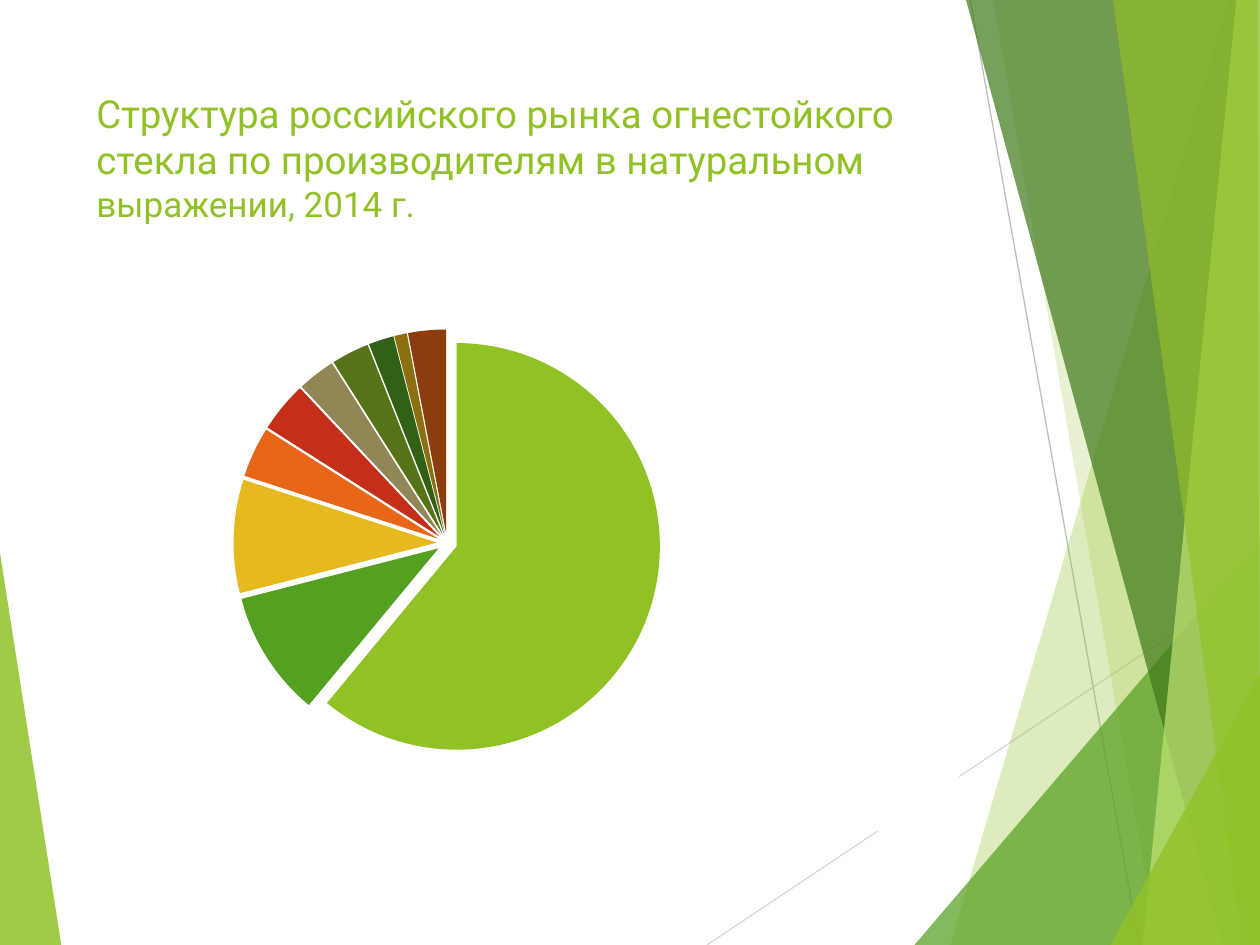
from lxml import etree
from pptx import Presentation
from pptx.chart.data import CategoryChartData
from pptx.dml.color import RGBColor
from pptx.enum import chart as ch, shapes, text
from pptx.oxml import parse_xml
from pptx.oxml.ns import nsdecls, qn
from pptx.util import Pt

W, H = 720, 540
FONT = "Roboto"
COLORS = {
    "lime": "90C226", "green": "54A021", "forest": "3F7819", "pale": "C0E474",
    "line": "D9D9D9", "dark line": "BFBFBF", "white": "FFFFFF", "black": "000000",
}

TITLE = [
    ("Структура российского рынка огнестойкого стекла по производителям в натуральном ", 22),
    ("выражении, 2014 г.", 20),
]
TITLE_BOX = (48, 48, 500, 104)

# share of each producer in percent, colour of its slice
SHARES = [
    (61, "90C226"), (10, "54A021"), (9, "E6B91E"), (4, "E76618"), (4, "C42F1A"),
    (3, "918655"), (3, "567417"), (2, "326014"), (1, "8C7010"), (3, "8B3D0E"),
]
CHART_BOX = (48, 170, 500, 305)
PLOT = {"x": 0, "y": 0.06, "w": 0.83, "h": 0.8}
EXPLOSION = 5

# colour, opacity in percent, corners
LEFT_FACET = ("lime", 85, [(0, 316), (35, H), (0, H)])
LINES = [
    ("line", (404, H), (W, 329)),
    ("dark line", (554.5, 0), (651, H)),
]
RIGHT_FACETS = [
    ("lime", 30, [(702, 0), (543, H), (W, H), (W, 0)]),
    ("lime", 20, [(567.5, 0), (661.5, H), (W, H), (W, 0)]),
    ("green", 72, [(522.5, H), (W, 309), (W, H)]),
    ("forest", 70, [(552, 0), (698.5, H), (W, H), (W, 0)]),
    ("pale", 70, [(706.5, 0), (653, H), (W, H), (W, 0)]),
    ("lime", 65, [(636, 0), (710, H), (W, H), (718.5, 0)]),
    ("lime", 80, [(634.5, H), (W, 385), (W, H)]),
]


def rgb(name):
    return RGBColor.from_string(COLORS[name])


def points(values):
    return [Pt(v) for v in values]


def add_facet(slide, color, opacity, corners):
    start, *rest = [points(corner) for corner in corners]
    builder = slide.shapes.build_freeform(*start, scale=1.0)
    builder.add_line_segments(rest, close=True)
    facet = builder.convert_to_shape()
    facet.shadow.inherit = False
    facet.line.fill.background()
    facet.fill.solid()
    facet.fill.fore_color.rgb = rgb(color)
    tint = facet.fill._xPr.find(".//" + qn("a:srgbClr"))
    etree.SubElement(tint, qn("a:alpha")).set("val", str(opacity * 1000))


def add_line(slide, color, start, end):
    line = slide.shapes.add_connector(
        shapes.MSO_CONNECTOR.STRAIGHT, *points(start + end))
    line.line.color.rgb = rgb(color)
    line.line.width = Pt(0.75)
    etree.SubElement(line._element.spPr, qn("a:effectLst"))


def add_title(slide):
    frame = slide.shapes.add_textbox(*points(TITLE_BOX)).text_frame
    frame.word_wrap = True
    frame.vertical_anchor = text.MSO_ANCHOR.TOP
    heading = frame.paragraphs[0]
    heading.font.name = FONT
    heading.font.color.rgb = rgb("lime")
    for words, size in TITLE:
        run = heading.add_run()
        run.text = words
        run.font.size = Pt(size)


def add_share_pie(slide):
    data = CategoryChartData()
    data.categories = [str(i + 1) for i in range(len(SHARES))]
    data.add_series("Series 1", [share for share, _ in SHARES])
    pie = slide.shapes.add_chart(
        ch.XL_CHART_TYPE.PIE, *points(CHART_BOX), data).chart
    pie.has_title = False
    pie.has_legend = False
    pie.font.name = FONT
    pie.font.size = Pt(10)
    pie.font.color.rgb = rgb("black")

    plot = pie.plots[0]
    plot.vary_by_categories = True
    series = plot.series[0]
    for i, (_, color) in enumerate(SHARES):
        fill = series.points[i].format.fill
        fill.solid()
        fill.fore_color.rgb = RGBColor.from_string(color)
    explosion = parse_xml(f'<c:explosion {nsdecls("c")} val="{EXPLOSION}"/>')
    series._element.find(qn("c:dPt")).addprevious(explosion)

    # fixed plot area
    area = pie._chartSpace.chart.plotArea
    for old in area.findall(qn("c:layout")):
        area.remove(old)
    sizes = "".join(f'<c:{key} val="{value}"/>' for key, value in PLOT.items())
    area.insert(0, parse_xml(
        f'<c:layout {nsdecls("c")}><c:manualLayout><c:layoutTarget val="inner"/>'
        f'<c:xMode val="edge"/><c:yMode val="edge"/>{sizes}'
        '</c:manualLayout></c:layout>'))

    # white chart background, which hides part of the long line
    pie._chartSpace.chart.addnext(parse_xml(
        f'<c:spPr {nsdecls("c", "a")}><a:solidFill><a:srgbClr val="{COLORS["white"]}"/>'
        '</a:solidFill><a:ln><a:noFill/></a:ln></c:spPr>'))


def main():
    prs = Presentation()
    prs.slide_width, prs.slide_height = Pt(W), Pt(H)
    slide = prs.slides.add_slide(prs.slide_layouts[6])
    add_facet(slide, *LEFT_FACET)
    for line in LINES:
        add_line(slide, *line)
    for facet in RIGHT_FACETS:
        add_facet(slide, *facet)
    add_title(slide)
    add_share_pie(slide)
    prs.save("out.pptx")


if __name__ == "__main__":
    main()
